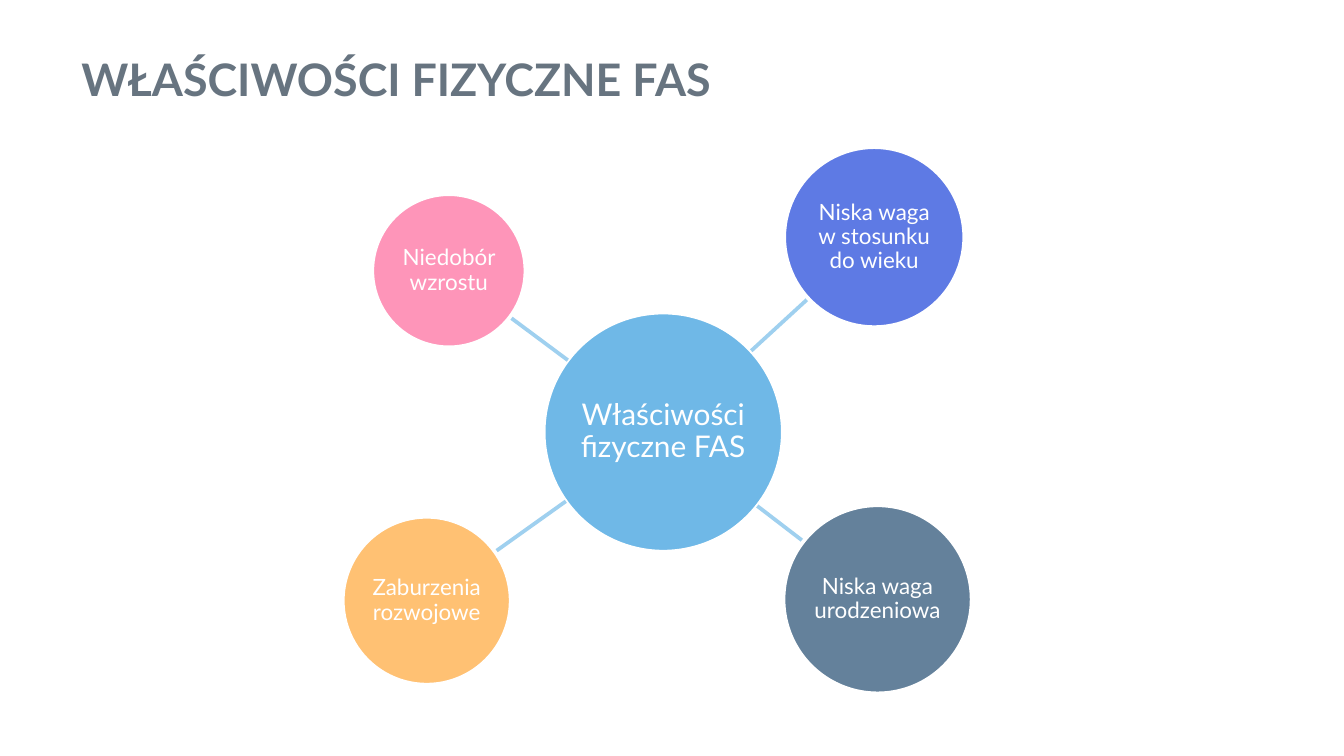
import math

from lxml import etree
from pptx import Presentation
from pptx import util as u
from pptx.dml.color import RGBColor
from pptx.enum import shapes, text
from pptx.oxml.ns import qn

PX = 4572


def color(value):
    return RGBColor.from_string(value)


def add_circle(label, x, y, diameter, fill, size):
    radius = diameter // 2
    circle = slide.shapes.add_shape(
        shapes.MSO_SHAPE.OVAL,
        (x - radius) * PX, (y - radius) * PX, diameter * PX, diameter * PX)
    circle.shadow.inherit = False
    circle.fill.solid()
    circle.fill.fore_color.rgb = color(fill)
    circle.line.color.rgb = color("FFFFFF")
    circle.line.width = u.Pt(2)
    frame = circle.text_frame
    frame.margin_left = frame.margin_right = 2 * PX
    frame.margin_top = frame.margin_bottom = 2 * PX
    frame.word_wrap = True
    frame.vertical_anchor = text.MSO_ANCHOR.MIDDLE
    frame.text = label
    paragraph = frame.paragraphs[0]
    paragraph.alignment = text.PP_ALIGN.CENTER
    paragraph.line_spacing = 0.9
    font = paragraph.runs[0].font
    font.name = "Lato"
    font.size = u.Pt(size)
    font.color.rgb = color("FFFFFF")


prs = Presentation()
prs.slide_width = 2000 * PX
prs.slide_height = 1125 * PX
slide = prs.slides.add_slide(prs.slide_layouts[5])

title = slide.shapes.title
title.left, title.top, title.width, title.height = 101 * PX, 57 * PX, 1754 * PX, 160 * PX
heading = title.text_frame
heading.margin_left = heading.margin_right = 20 * PX
heading.margin_top = heading.margin_bottom = 20 * PX
heading.auto_size = text.MSO_AUTO_SIZE.NONE
heading.vertical_anchor = text.MSO_ANCHOR.TOP
heading.text = "WŁAŚCIWOŚCI FIZYCZNE FAS"
heading.paragraphs[0].alignment = text.PP_ALIGN.LEFT
heading_font = heading.paragraphs[0].runs[0].font
heading_font.name = "Lato"
heading_font.size = u.Pt(24)
heading_font.bold = True
heading_font.color.rgb = color("677480")

hub_x, hub_y, hub_diameter = 987, 643, 356
add_circle("Właściwości fizyczne FAS", hub_x, hub_y, hub_diameter, "6FB8E7", 16)

features = [
    ("Niska waga w stosunku do wieku", 1301, 353, 268, "5E7AE4"),
    ("Niska waga urodzeniowa", 1306, 892, 280, "64819B"),
    ("Zaburzenia rozwojowe", 635, 894, 250, "FFC173"),
    ("Niedobór wzrostu", 668, 403, 228, "FE95B9"),
]
for label, x, y, diameter, fill in features:
    distance = math.hypot(x - hub_x, y - hub_y)
    dx, dy = (x - hub_x) / distance, (y - hub_y) / distance
    start, end = hub_diameter / 2, distance - diameter / 2
    spoke = slide.shapes.add_connector(
        shapes.MSO_CONNECTOR.STRAIGHT,
        round(hub_x + dx * start) * PX, round(hub_y + dy * start) * PX,
        round(hub_x + dx * end) * PX, round(hub_y + dy * end) * PX)
    spoke.line.color.rgb = color("9FD0EF")
    spoke.line.width = u.Pt(2)
    etree.SubElement(spoke._element.spPr, qn("a:effectLst"))
    add_circle(label, x, y, diameter, fill, 12)

prs.save("out.pptx")
